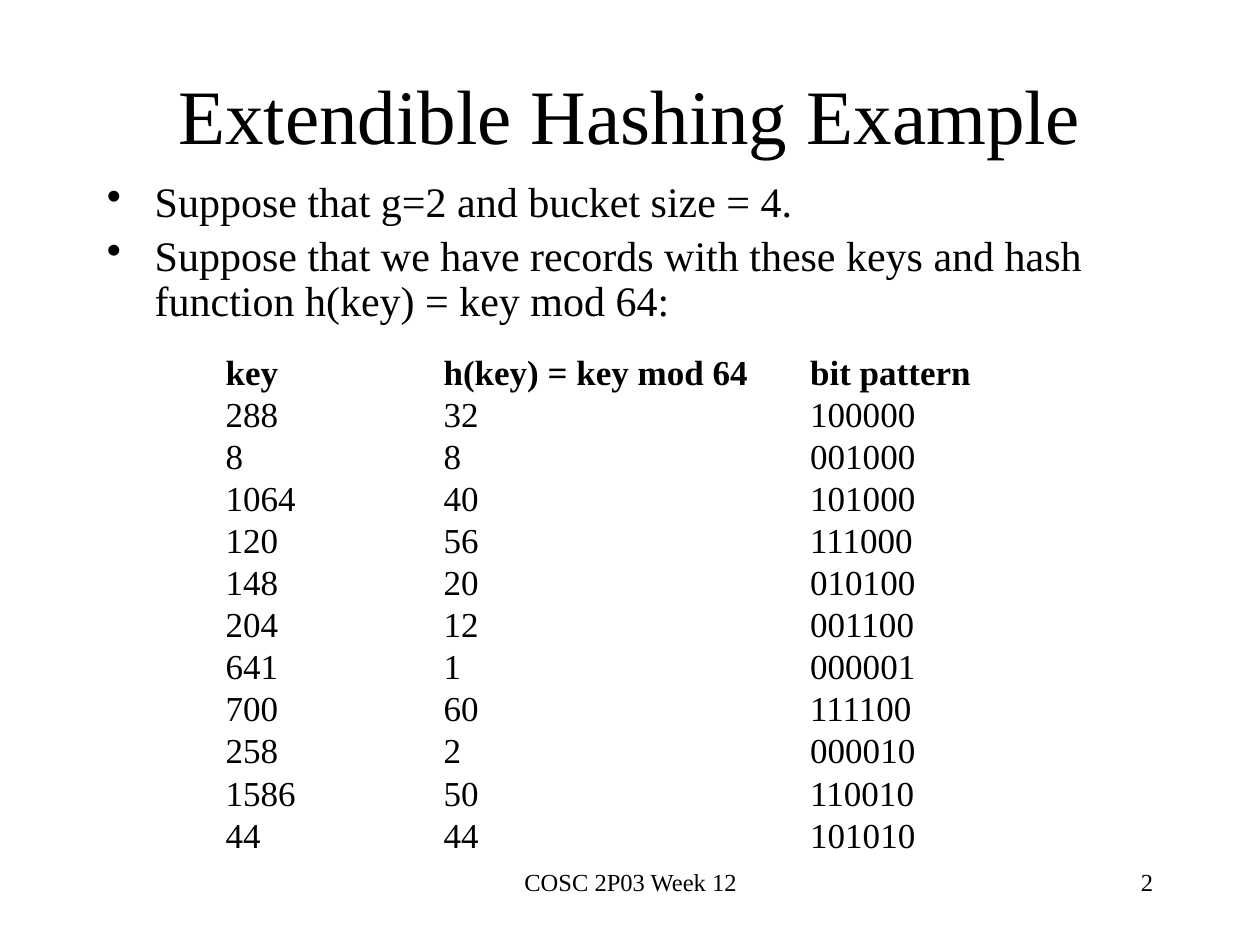
import pptx
import pptx.dml.color
import pptx.enum.text
import pptx.oxml
import pptx.oxml.ns
import pptx.util
from pptx.util import Inches

BLACK = pptx.dml.color.RGBColor(0x00, 0x00, 0x00)
ALIGN = pptx.enum.text.PP_ALIGN
ANCHOR = pptx.enum.text.MSO_ANCHOR
TITLE_ONLY = 5

BULLETS = [
    "Suppose that g=2 and bucket size = 4.",
    "Suppose that we have records with these keys and hash function "
    "h(key) = key mod 64:",
]
HASH_ROWS = [
    ("key", "h(key) = key mod 64", "bit pattern"),
    ("288", "32", "100000"),
    ("8", "8", "001000"),
    ("1064", "40", "101000"),
    ("120", "56", "111000"),
    ("148", "20", "010100"),
    ("204", "12", "001100"),
    ("641", "1", "000001"),
    ("700", "60", "111100"),
    ("258", "2", "000010"),
    ("1586", "50", "110010"),
    ("44", "44", "101010"),
]


class SlideBuilder:
    """Holds the text style and the current slide."""

    font_name = "Times New Roman"
    color = BLACK

    def __init__(self, slide):
        self.slide = slide

    def format(self, paragraph, size, align=ALIGN.LEFT, bold=False):
        paragraph.alignment = align
        font = paragraph.font
        font.name = self.font_name
        font.size = pptx.util.Pt(size)
        font.bold = bold
        font.color.rgb = self.color

    def title(self, text, left, top, width, height):
        shape = self.slide.shapes.title
        shape.left, shape.top = Inches(left), Inches(top)
        shape.width, shape.height = Inches(width), Inches(height)
        shape.text_frame.text = text
        shape.text_frame.vertical_anchor = ANCHOR.MIDDLE
        self.format(shape.text_frame.paragraphs[0], 44, ALIGN.CENTER)

    def text(self, lines, left, top, width, height, size, align=ALIGN.LEFT):
        shape = self.slide.shapes.add_textbox(
            Inches(left), Inches(top), Inches(width), Inches(height))
        frame = shape.text_frame
        frame.word_wrap = True
        frame.text = "\n".join(lines)
        for paragraph in frame.paragraphs:
            self.format(paragraph, size, align)
        return frame

    def bullets(self, lines, left, top, width, height, size):
        frame = self.text(lines, left, top, width, height, size)
        for paragraph in frame.paragraphs:
            paragraph.line_spacing = 0.9
            paragraph.space_before = pptx.util.Pt(0.2 * size)
            properties = paragraph._p.get_or_add_pPr()
            properties.set("marL", str(Inches(0.38)))
            properties.set("indent", str(Inches(-0.38)))
            bullet = pptx.oxml.parse_xml(
                f'<a:buChar {pptx.oxml.ns.nsdecls("a")} char="•"/>')
            properties.insert_element_before(
                bullet, "a:tabLst", "a:defRPr", "a:extLst")

    def table(self, rows, left, top, column_widths, row_height, size):
        table = self.slide.shapes.add_table(
            len(rows), len(column_widths), Inches(left), Inches(top),
            Inches(sum(column_widths)), Inches(row_height * len(rows))).table
        table.first_row = table.horz_banding = False
        for column, width in zip(table.columns, column_widths):
            column.width = Inches(width)
        for row_index, values in enumerate(rows):
            for column_index, value in enumerate(values):
                cell = table.cell(row_index, column_index)
                cell.fill.background()
                cell.margin_left = cell.margin_right = Inches(0.1)
                cell.margin_top = cell.margin_bottom = 0
                cell.text = value
                self.format(cell.text_frame.paragraphs[0], size,
                            bold=row_index == 0)


def main():
    presentation = pptx.Presentation()
    presentation.slide_width = Inches(10)
    presentation.slide_height = Inches(7.5)
    layout = presentation.slide_layouts[TITLE_ONLY]
    builder = SlideBuilder(presentation.slides.add_slide(layout))

    # Title and introduction
    builder.title("Extendible Hashing Example", 0.75, 0.28, 8.5, 1.25)
    builder.bullets(BULLETS, 0.75, 1.39, 8.5, 1.34, 24)

    # Keys with their hash values
    builder.table(HASH_ROWS, 1.69, 2.81, (1.73, 2.91, 2.02), 0.29, 20)

    # Footer and slide number
    builder.text(["COSC 2P03 Week 12"], 3.42, 6.83, 3.17, 0.5, 14, ALIGN.CENTER)
    builder.text(["2"], 7.17, 6.83, 2.08, 0.5, 14, ALIGN.RIGHT)

    presentation.save("out.pptx")


if __name__ == "__main__":
    main()
